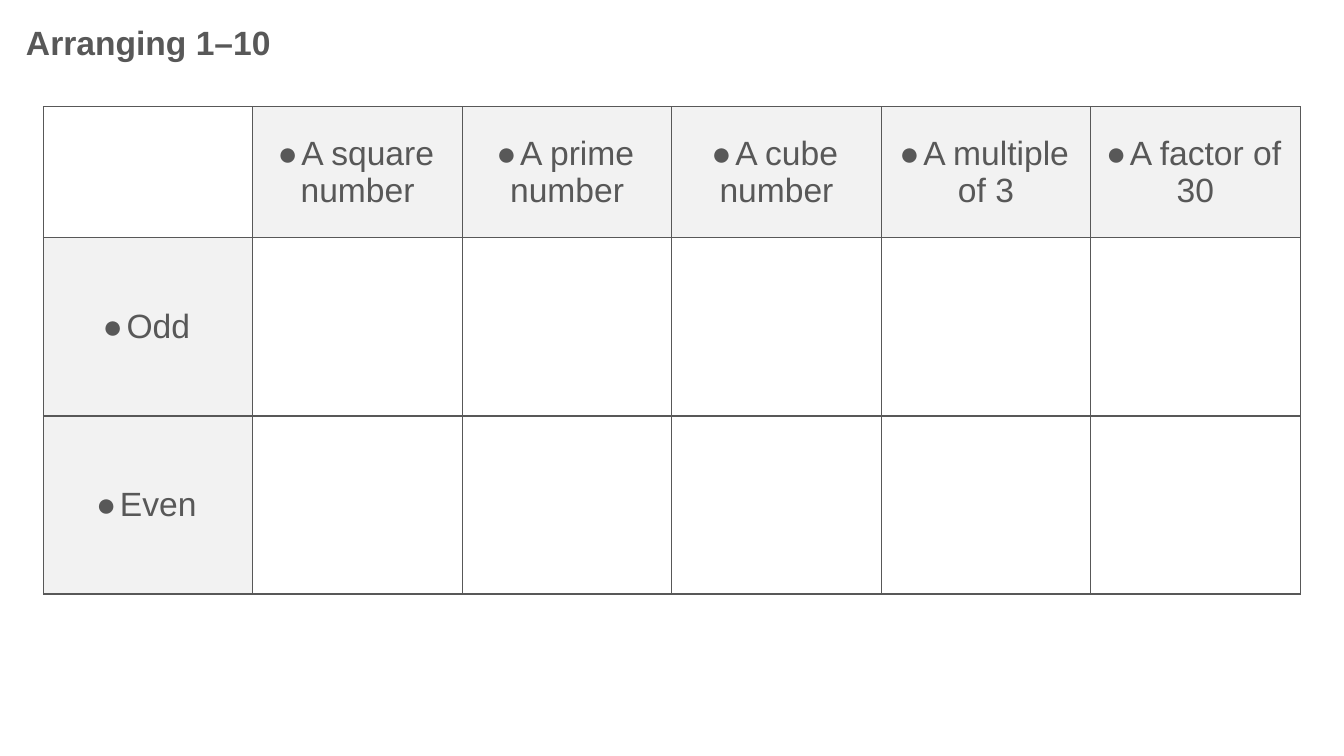
"""Build a slide with a grid for arranging the numbers 1–10."""
import dataclasses

import lxml.etree
import pptx
import pptx.dml.color
import pptx.enum.text
import pptx.oxml.ns
import pptx.util

Pt = pptx.util.Pt
COLORS = {"text": "585858", "header": "F2F2F2", "blank": "FFFFFF"}
FONT = "Arial"
FONT_SIZE = 24
COLUMN_WIDTH = 149.64
ROW_HEIGHTS = (93.6, 127.2, 127.2)


@dataclasses.dataclass(frozen=True)
class Header:
    row: int
    col: int
    text: str


COLUMN_LABELS = ("A square number", "A prime number", "A cube number",
                 "A multiple of 3", "A factor of 30")
ROW_LABELS = ("Odd", "Even")
HEADERS = [Header(0, i, s) for i, s in enumerate(COLUMN_LABELS, 1)]
HEADERS += [Header(i, 0, s) for i, s in enumerate(ROW_LABELS, 1)]


def rgb(name: str) -> pptx.dml.color.RGBColor:
    return pptx.dml.color.RGBColor.from_string(COLORS[name])


def sub(parent, tag: str, **attrs: str):
    return lxml.etree.SubElement(parent, pptx.oxml.ns.qn(tag), attrs)


def add_run(p, text: str, bold: bool = False) -> None:
    r = p.add_run()
    r.text = text
    r.font.name = FONT
    r.font.size = Pt(FONT_SIZE)
    r.font.bold = bold
    r.font.color.rgb = rgb("text")


def format_cell(cell) -> None:
    tc_pr = cell._tc.get_or_add_tcPr()
    for side in ("a:lnL", "a:lnR", "a:lnT", "a:lnB"):
        ln = sub(tc_pr, side, w=str(Pt(1)))
        sub(sub(ln, "a:solidFill"), "a:srgbClr", val=COLORS["text"])
    cell.fill.solid()
    cell.fill.fore_color.rgb = rgb("blank")


def add_header(table, header: Header) -> None:
    cell = table.cell(header.row, header.col)
    cell.fill.fore_color.rgb = rgb("header")
    cell.vertical_anchor = pptx.enum.text.MSO_ANCHOR.MIDDLE
    p = cell.text_frame.paragraphs[0]
    p.alignment = pptx.enum.text.PP_ALIGN.CENTER
    p_pr = p._p.get_or_add_pPr()
    sub(sub(p_pr, "a:spcBef"), "a:spcPct", val="20000")
    sub(p_pr, "a:buFont", typeface=FONT)
    sub(p_pr, "a:buChar", char="●")
    add_run(p, header.text)


def add_grid(slide) -> None:
    rows, cols = len(ROW_HEIGHTS), len(COLUMN_LABELS) + 1
    table = slide.shapes.add_table(
        rows, cols, Pt(31), Pt(76.3),
        Pt(cols * COLUMN_WIDTH), Pt(sum(ROW_HEIGHTS))).table
    table.first_row = False
    table.horz_banding = False
    for col in table.columns:
        col.width = Pt(COLUMN_WIDTH)
    for row, height in zip(table.rows, ROW_HEIGHTS):
        row.height = Pt(height)
    for cell in table.iter_cells():
        format_cell(cell)
    for header in HEADERS:
        add_header(table, header)


def add_title(slide, text: str) -> None:
    sp = slide.shapes.add_textbox(Pt(11.5), Pt(15.1), Pt(938.9), Pt(33.8))
    tf = sp.text_frame
    tf.word_wrap = True
    tf.vertical_anchor = pptx.enum.text.MSO_ANCHOR.MIDDLE
    p = tf.paragraphs[0]
    p.line_spacing = 0.9
    p.space_before = Pt(10)
    add_run(p, text, bold=True)


def main() -> None:
    prs = pptx.Presentation()
    prs.slide_width, prs.slide_height = Pt(960), Pt(540)
    slide = prs.slides.add_slide(prs.slide_layouts[6])
    add_grid(slide)
    add_title(slide, "Arranging 1–10")
    prs.save("out.pptx")


if __name__ == "__main__":
    main()
